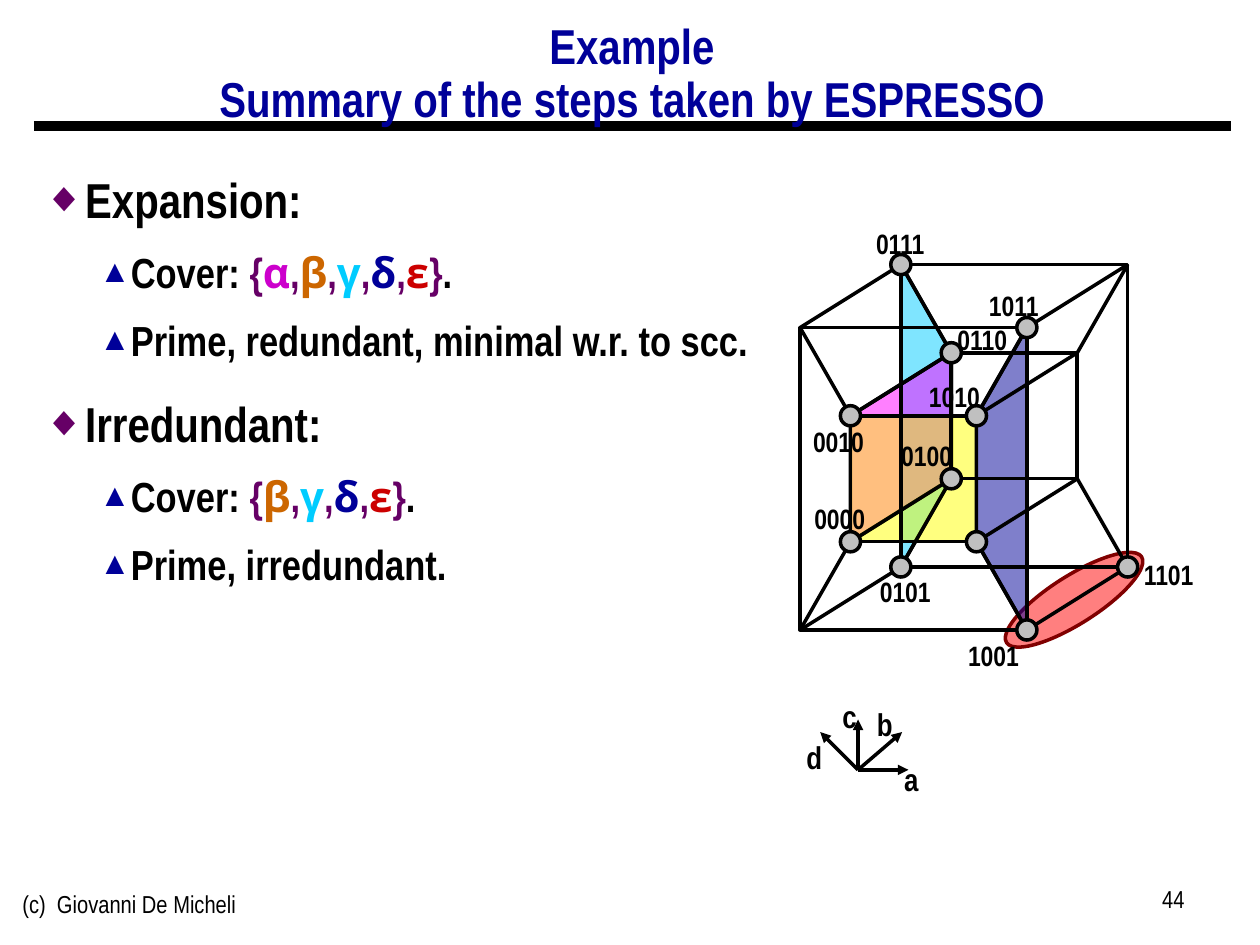
"""Build the slide that sums up the ESPRESSO steps beside a four-variable cube."""
from itertools import product

from lxml.etree import SubElement
from pptx import Presentation
from pptx.dml.color import RGBColor
from pptx.enum.shapes import MSO_CONNECTOR as Connector, MSO_SHAPE as Shape
from pptx.enum.text import MSO_ANCHOR as Anchor, MSO_AUTO_SIZE as AutoSize, PP_ALIGN as Align
from pptx.oxml.ns import qn
from pptx.util import Inches, Pt

CELL = Inches(0.05)
COLUMNS, ROWS = 200, 150
FONT, GREEK_FONT = "Arial Narrow", "Open Sans"
COLORS = {
    "black": "000000", "navy": "000099", "purple": "660066", "grey": "C0C0C0",
    "yellow": "FFFF00", "maroon": "800000", "red": "FF0000", "magenta": "FF00FF",
    "cyan": "00CCFF",
}
IMPLICANTS = {"α": "CC00CC", "β": "CC6600", "γ": "00CCFF", "δ": "000099", "ε": "CC0000"}
BULLETS = [
    {"mark": "◆", "color": "purple", "share": 85, "size": 28, "indent": 0.31, "hang": 0.31, "spacing": 1.25},
    {"mark": "▲", "color": "navy", "share": 75, "size": 24, "indent": 0.69, "hang": 0.25, "spacing": 1.1},
]
MINTERM_LABELS = {
    "1001": (151.6, 100.4), "0111": (136.8, 35), "1011": (154.8, 44.8), "0110": (149.8, 50.2),
    "0010": (127, 66.4), "0000": (127.2, 78.6), "0101": (137.6, 90.2), "1101": (179.4, 87.6),
    "0100": (141, 68.6), "1010": (145.4, 59.2),
}
AXIS_ORIGIN = (136.2, 122.2)
AXES = {
    "a": ((144.2, 122.2), (141.4, 119.6)), "b": ((143.2, 116.2), (137.2, 111)),
    "c": ((136.2, 114.2), (131.6, 109.6)), "d": ((130.2, 116.2), (126, 116.2)),
}


def grid(*cells):
    """Turn grid cells into slide lengths."""
    return [round(cell * CELL) for cell in cells]


def rgb(value):
    """Return a colour from its name or hex string."""
    return RGBColor.from_string(COLORS.get(value, value))


def vertex(code):
    """Return the column and row of the cube corner with bits abcd."""
    a, b, c, d = map(int, code)
    if d:
        return 127 + 36 * a + 16 * b, 100 - 48 * c - 10 * b
    return 135 + 20 * a + 16 * b, 86 - 20 * c - 10 * b


def style_run(run, size, color="black", bold=True, font=FONT):
    """Set the font of one run."""
    run.font.name, run.font.size, run.font.bold = font, Pt(size), bold
    run.font.color.rgb = rgb(color)


def add_text(shapes, text, box, size, color="black", bold=True, align=Align.CENTER, wrap=False):
    """Add a text box in one style and return its frame."""
    frame = shapes.add_textbox(*grid(*box)).text_frame
    frame.text = text
    frame.word_wrap = wrap
    frame.auto_size = AutoSize.NONE if wrap else AutoSize.SHAPE_TO_FIT_TEXT
    frame.paragraphs[0].alignment = align
    for run in frame.paragraphs[0].runs:
        style_run(run, size, color, bold)
    return frame


def add_line(shapes, start, end, width=2, arrow=False):
    """Add a straight black line, with an arrowhead at its end if wanted."""
    line = shapes.add_connector(Connector.STRAIGHT, *grid(*start, *end))
    line.line.color.rgb, line.line.width = rgb("black"), Pt(width)
    if arrow:
        SubElement(line.line._get_or_add_ln(), qn("a:tailEnd"), type="triangle")
    SubElement(line._element.spPr, qn("a:effectLst"))


def paint(shape, fill=None, outline="black", alpha=None):
    """Give a shape its fill, transparency and outline."""
    shape.shadow.inherit = False
    if fill:
        shape.fill.solid()
        shape.fill.fore_color.rgb = rgb(fill)
        if alpha:
            tint = shape._element.spPr.find(".//" + qn("a:srgbClr"))
            SubElement(tint, qn("a:alpha"), val=str(alpha * 1000))
    else:
        shape.fill.background()
    shape.line.color.rgb, shape.line.width = rgb(outline), Pt(2)


def add_face(shapes, codes, fill):
    """Add a half-transparent face through the given corners."""
    first, *others = map(vertex, codes.split())
    builder = shapes.build_freeform(*first, scale=float(CELL))
    builder.add_line_segments(others, close=True)
    paint(builder.convert_to_shape(), fill, alpha=50)


def add_front(shapes, top_left, bottom_right, fill=None, alpha=None):
    """Add an upright rectangle between two cube corners."""
    (left, top), (right, bottom) = vertex(top_left), vertex(bottom_right)
    box = grid(left, top, right - left, bottom - top)
    paint(shapes.add_shape(Shape.RECTANGLE, *box), fill, alpha=alpha)


def add_minterm(shapes, code, radius=1.6):
    """Add the dot on a cube corner."""
    x, y = vertex(code)
    box = grid(x - radius, y - radius, 2 * radius, 2 * radius)
    paint(shapes.add_shape(Shape.OVAL, *box), "grey")


def add_implicants(shapes):
    """Add the coloured implicants of the cover."""
    add_face(shapes, "0101 0100 0110 0111", "cyan")
    add_face(shapes, "0010 0110 0100 0000", "magenta")
    add_front(shapes, "0010", "1000", "yellow", 50)
    edge = shapes.add_shape(Shape.OVAL, *grid(157.8, 91.4, 25.4, 7.6))
    edge.rotation = 327.6
    paint(edge, "red", "maroon", 50)
    add_face(shapes, "1011 1010 1000 1001", "navy")


def add_cube(shapes):
    """Add the edges, labels and dots of the cube."""
    for b, d in product("01", repeat=2):
        add_front(shapes, f"0{b}1{d}", f"1{b}0{d}")
    for x, y, z in product("01", repeat=3):
        add_line(shapes, vertex(f"{x}0{y}{z}"), vertex(f"{x}1{y}{z}"))
        add_line(shapes, vertex(f"{x}{y}{z}0"), vertex(f"{x}{y}{z}1"))
    for code, place in MINTERM_LABELS.items():
        add_text(shapes, code, (*place, 12.2, 7.4), 16)
    for code in [*MINTERM_LABELS, "1000"]:
        add_minterm(shapes, code)


def add_axes(shapes):
    """Add the group of named direction arrows."""
    compass = shapes.add_group_shape().shapes
    for name, (tip, place) in AXES.items():
        add_line(compass, AXIS_ORIGIN, tip, arrow=True)
        add_text(compass, name, (*place, 6.5, 8), 18)


def cover(letters):
    """Return the coloured pieces of a cover listing."""
    pieces = [("Cover: ", "black", FONT)]
    for index, letter in enumerate(letters):
        pieces.append(("," if index else "{", "purple", FONT))
        pieces.append((letter, IMPLICANTS[letter], GREEK_FONT))
    return pieces + [("}", "purple", FONT), (".", "black", FONT)]


def add_bullet(paragraph, level, pieces):
    """Fill a paragraph as a bullet of the given level."""
    look = BULLETS[level]
    paragraph.level, paragraph.line_spacing = level, look["spacing"]
    props = paragraph._p.get_or_add_pPr()
    props.set("marL", str(Inches(look["indent"])))
    props.set("indent", str(-Inches(look["hang"])))
    SubElement(SubElement(props, qn("a:spcBef")), qn("a:spcPct"), val="30000")
    SubElement(SubElement(props, qn("a:buClr")), qn("a:srgbClr"), val=COLORS[look["color"]])
    SubElement(props, qn("a:buSzPct"), val=str(look["share"] * 1000))
    SubElement(props, qn("a:buFont"), typeface="Arial")
    SubElement(props, qn("a:buChar"), char=look["mark"])
    for text, color, font in pieces:
        run = paragraph.add_run()
        run.text = text
        style_run(run, look["size"], color, font=font)


def add_steps(shapes):
    """Add the list of steps."""
    steps = [
        (0, [("Expansion:", "black", FONT)]), (1, cover("αβγδε")),
        (1, [("Prime, redundant, minimal w.r. to scc.", "black", FONT)]),
        (0, [("Irredundant:", "black", FONT)]), (1, cover("βγδε")),
        (1, [("Prime, irredundant.", "black", FONT)]),
    ]
    frame = shapes.add_textbox(*grid(5, 23.6, 190.2, 113.8)).text_frame
    frame.word_wrap = True
    for index, (level, pieces) in enumerate(steps):
        add_bullet(frame.add_paragraph() if index else frame.paragraphs[0], level, pieces)


def main():
    """Build and save the slide."""
    deck = Presentation()
    deck.slide_width, deck.slide_height = grid(COLUMNS, ROWS)
    shapes = deck.slides.add_slide(deck.slide_layouts[6]).shapes
    add_line(shapes, (5.4, 20), (195.4, 20), 6)
    add_text(shapes, "(c)  Giovanni De Micheli", (1.6, 140.2, 63.4, 10.4), 14, bold=False, align=Align.LEFT, wrap=True)
    add_text(shapes, "44", (143.4, 139.4, 46.6, 10.4), 14, bold=False, align=Align.RIGHT, wrap=True)
    title = add_text(shapes, "Example\vSummary of the steps taken by ESPRESSO", (5.2, 4.4, 190.2, 15), 28, "navy", wrap=True)
    title.vertical_anchor, title.paragraphs[0].line_spacing = Anchor.MIDDLE, 0.9
    add_steps(shapes)
    add_axes(shapes)
    add_implicants(shapes)
    add_cube(shapes)
    deck.save("out.pptx")


if __name__ == "__main__":
    main()
